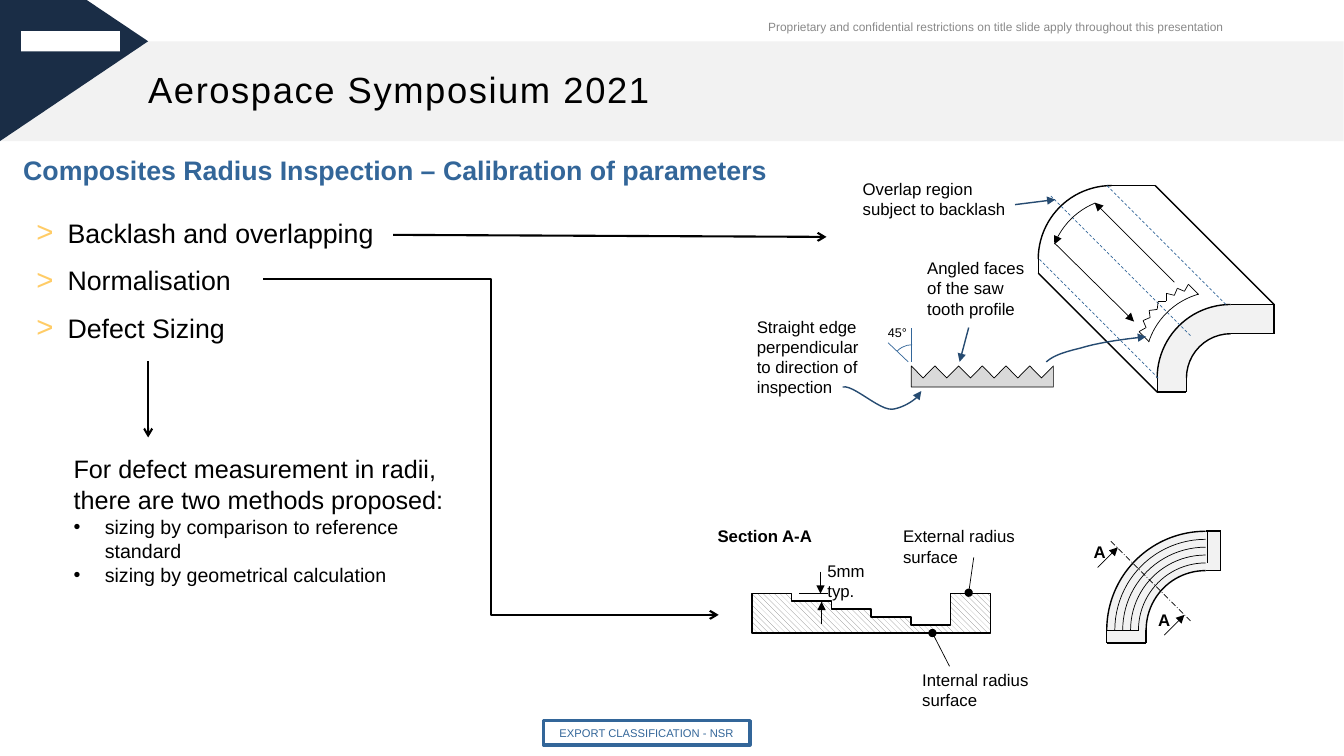
from dataclasses import dataclass
from itertools import pairwise
from math import cos, pi, sin

from lxml import etree
from pptx import Presentation
from pptx.dml.color import RGBColor
from pptx.enum.dml import MSO_LINE, MSO_PATTERN
from pptx.enum.shapes import MSO_CONNECTOR, MSO_SHAPE
from pptx.enum.text import MSO_ANCHOR, MSO_AUTO_SIZE, PP_ALIGN
from pptx.oxml.ns import qn
from pptx.util import Emu, Inches, Pt

ARC, RECT = MSO_SHAPE.ARC, MSO_SHAPE.RECTANGLE
STRAIGHT, ELBOW = MSO_CONNECTOR.STRAIGHT, MSO_CONNECTOR.ELBOW
DASH, CENTRE_LINE = MSO_LINE.DASH, MSO_LINE.LONG_DASH_DOT
HATCH = MSO_PATTERN.WIDE_DOWNWARD_DIAGONAL
LEFT, CENTER, RIGHT = PP_ALIGN.LEFT, PP_ALIGN.CENTER, PP_ALIGN.RIGHT
TOP, MIDDLE = MSO_ANCHOR.TOP, MSO_ANCHOR.MIDDLE
NO_AUTOFIT = MSO_AUTO_SIZE.NONE


@dataclass(frozen=True)
class Theme:
    font: str = "Arial"
    ink: str = "000000"
    paper: str = "FFFFFF"
    band: str = "F2F2F2"
    navy: str = "1A2D46"
    blue: str = "336699"
    pointer: str = "264B71"
    marker: str = "FFCC66"
    steel: str = "D9D9D9"
    hatch: str = "808080"
    muted: str = "898989"
    title: float = 26
    heading: float = 19.1
    lead: float = 18
    item: float = 14
    label: float = 12
    angle: float = 9
    notice: float = 8.5
    badge: float = 8
    thin: float = 0.5
    edge: float = 1
    flow: float = 1.5
    frame: float = 2.5


def grid(value):
    return Emu(round(Inches(value / 10)))


def apply(target, values):
    for name, value in values.items():
        setattr(target, name, value)


def bezier(start, *segments, steps=12):
    points = [start]
    for a, b, end in segments:
        origin = points[-1]
        for i in range(1, steps + 1):
            t, u = i / steps, 1 - i / steps
            points.append(tuple(u**3 * p + 3 * u * u * t * q + 3 * u * t * t * r + t**3 * s
                                for p, q, r, s in zip(origin, a, b, end)))
    return points


def quarter(center, radius, steps=24):
    angles = [pi + pi / 2 * i / steps for i in range(steps + 1)]
    return [(center[0] + radius * cos(a), center[1] + radius * sin(a)) for a in angles]


class Sheet:
    """Draws styled elements on one slide, on a grid of tenth-inch columns and rows."""

    def __init__(self, slide, theme):
        self.slide, self.shapes, self.theme = slide, slide.shapes, theme

    def stroke(self, shape, color, width, dash=None, head=None, tail=None):
        shape.line.color.rgb = RGBColor.from_string(color)
        apply(shape.line, {"width": Pt(width), "dash_style": dash})
        for tag, kind in (("a:headEnd", head), ("a:tailEnd", tail)):
            if kind:
                etree.SubElement(shape.get_or_add_ln(), qn(tag), type=kind)

    def paint(self, shape, fill=None, line=None, **style):
        shape.shadow.inherit = False
        if fill:
            shape.fill.solid()
            shape.fill.fore_color.rgb = RGBColor.from_string(fill)
        else:
            shape.fill.background()
        if line:
            self.stroke(shape, line, **style)
        else:
            shape.line.fill.background()
        return shape

    def line(self, start, end, color=None, width=None, kind=STRAIGHT, **style):
        connector = self.shapes.add_connector(kind, *map(grid, (*start, *end)))
        self.stroke(connector, color or self.theme.ink, width or self.theme.thin, **style)
        etree.SubElement(connector._element.spPr, qn("a:effectLst"))

    def outline(self, points, closed=True, **style):
        corners = [(grid(x), grid(y)) for x, y in points]
        builder = self.shapes.build_freeform(*corners[0])
        builder.add_line_segments(corners[1:], close=closed)
        return self.paint(builder.convert_to_shape(), **style)

    def block(self, box, **style):
        return self.paint(self.shapes.add_shape(RECT, *map(grid, box)), **style)

    def arc(self, box, span=(162, 0), turn=270, color=None, **style):
        curve = self.shapes.add_shape(ARC, *map(grid, box))
        curve.rotation = turn
        curve.adjustments[0], curve.adjustments[1] = span
        self.paint(curve, line=color or self.theme.ink, **style)

    def quarter_arc(self, center, radius, **style):
        self.arc((center[0] - radius, center[1] - radius, 2 * radius, 2 * radius), **style)

    def bend(self, center, outer, inner, right, bottom):
        x, y = center
        rim, bore = quarter(center, outer), quarter(center, inner)
        self.outline([(x - outer, bottom), *rim, (right, y - outer), (right, y - inner),
                      *reversed(bore), (x - inner, bottom)], fill=self.theme.band)
        for radius in (outer, inner):
            self.quarter_arc(center, radius, width=self.theme.edge)
            self.line((x - radius, y), (x - radius, bottom), width=self.theme.edge)
            self.line((right, y - radius), (x, y - radius), width=self.theme.edge)
        self.line((right, y - outer), (right, y - inner), width=self.theme.edge)
        self.line((x - outer, bottom), (x - inner, bottom), width=self.theme.edge)

    def typeset(self, frame, lines, insets=(1, 0.5, 1, 0.5), anchor=TOP, spacing=1.0, gap=0,
                align=LEFT, color=None, bold=False, tracking=0):
        sides = ("margin_left", "margin_top", "margin_right", "margin_bottom")
        apply(frame, {"word_wrap": True, "auto_size": NO_AUTOFIT, "vertical_anchor": anchor,
                      **dict(zip(sides, map(grid, insets)))})
        for i, (words, size, bullet) in enumerate(lines):
            paragraph = frame.add_paragraph() if i else frame.paragraphs[0]
            apply(paragraph, {"alignment": align, "line_spacing": spacing,
                              "space_before": Pt(gap), "space_after": Pt(gap)})
            run = paragraph.add_run()
            run.text = words
            apply(run.font, {"name": self.theme.font, "size": Pt(size), "bold": bold})
            run.font.color.rgb = RGBColor.from_string(color or self.theme.ink)
            if tracking:
                run._r.get_or_add_rPr().set("spc", str(tracking))
            self.bullet(paragraph, bullet)

    def bullet(self, paragraph, mark):
        layout = paragraph._p.get_or_add_pPr()
        indent = grid(3.1) if mark else 0
        layout.set("marL", str(int(indent)))
        layout.set("indent", str(-int(indent)))
        if not mark:
            etree.SubElement(layout, qn("a:buNone"))
            return
        if mark == ">":
            tint = etree.SubElement(layout, qn("a:buClr"))
            etree.SubElement(tint, qn("a:srgbClr"), val=self.theme.marker)
            etree.SubElement(layout, qn("a:buSzPct"), val="110000")
        etree.SubElement(layout, qn("a:buFont"), typeface=self.theme.font)
        etree.SubElement(layout, qn("a:buChar"), char=mark)

    def text(self, box, words, size=None, **style):
        frame = self.shapes.add_textbox(*map(grid, box)).text_frame
        self.typeset(frame, [(words, size or self.theme.label, None)], **style)

    def placeholder(self, index, box, lines, **style):
        holder = self.slide.placeholders[index]
        apply(holder, dict(zip(("left", "top", "width", "height"), map(grid, box))))
        self.typeset(holder.text_frame, lines, **style)
        return holder


def draw_frame(sheet, t):
    title = sheet.placeholder(0, (0, 4.1, 133.3, 9.9), [("Aerospace Symposium 2021", t.title, None)],
                              insets=(14.7, 0, 0, 0.4), anchor=MIDDLE, tracking=110)
    sheet.paint(title, fill=t.band)
    sheet.outline([(0, 14), (14.7, 4.1), (8.6, 0), (0, 0)], fill=t.navy)
    sheet.block((2.1, 3.1, 9.8, 2), fill=t.paper)
    sheet.text((60.6, 1.9, 60.8, 2.1), "Proprietary and confidential restrictions on title slide "
               "apply throughout this presentation", t.notice, insets=(0,) * 4, align=RIGHT,
               spacing=1.02, color=t.muted)
    badge = sheet.block((53.9, 71.5, 20.5, 2.4), fill=t.paper, line=t.blue, width=t.frame)
    sheet.typeset(badge.text_frame, [("EXPORT CLASSIFICATION - NSR", t.badge, None)],
                  anchor=MIDDLE, align=CENTER, color=t.blue)


def draw_topics(sheet, t):
    body = {"insets": (0,) * 4, "spacing": 1.02}
    sheet.text((2.3, 15.2, 86.5, 12.6), "Composites Radius Inspection – Calibration of parameters",
               t.heading, gap=5.3, color=t.blue, bold=True, **body)
    topics = ("Backlash and overlapping", "Normalisation", "Defect Sizing")
    sheet.placeholder(1, (3.6, 21.4, 43.9, 12.6), [(topic, t.heading, ">") for topic in topics],
                      gap=5.3, **body)
    sheet.placeholder(2, (7.3, 44.9, 38.6, 14), [
        ("For defect measurement in radii, there are two methods proposed:", t.lead, None),
        ("sizing by comparison to reference standard", t.item, "•"),
        ("sizing by geometrical calculation", t.item, "•")], **body)
    for start, end, kind in (((39, 23.3), (82, 23.5), STRAIGHT), ((26.1, 27.7), (71.3, 61), ELBOW),
                             ((14.7, 35.8), (14.7, 43.4), STRAIGHT)):
        sheet.line(start, end, width=t.flow, kind=kind, tail="arrow")


def draw_overlap(sheet, t):
    depth, front = 11.8, (122.1, 37.5)
    rear = (front[0] - depth, front[1] - depth)
    sheet.bend(front, 7.3, 4.4, 126.4, 38.9)
    sheet.quarter_arc(rear, 7.3, width=t.edge)
    sheet.line((114.6, 18.4), (110.2, 18.4), width=t.edge)
    sheet.line((103, 25.7), (103, 27.1), width=t.edge)
    for x, y in ((114.8, 38.9), (126.4, 30.2)):
        sheet.line((x, y), (x - depth, y - depth), width=t.edge)
    for x, y, run in ((118.1, 33.3, 13.85), (121.6, 30.2, depth), (114.9, 37.5, depth)):
        sheet.line((x, y), (x - run, y - run), t.blue, dash=DASH)
    sheet.line((116.5, 28), (108.6, 20.1), tail="triangle")
    sheet.line((112.5, 31.9), (104.6, 24.1), head="triangle")
    sheet.arc((104.1, 19.6, 14.6, 14.6), (174.83, 202.67), width=t.thin, head="triangle")
    sheet.arc((113.6, 28.9, 14.6, 14.6), (172.83, 206.59), width=t.thin)
    curved_saw = [(114, 33.9), (113, 32.9), (113.7, 32.5), (113.4, 31.8), (114.1, 31.5),
                  (114, 30.8), (114.8, 30.7), (114.9, 29.9), (115.7, 29.9), (115.7, 29.1),
                  (116.5, 29.3), (116.8, 28.6), (117.5, 28.9), (117.9, 28.2), (118.9, 29.2)]
    for start, end in pairwise(curved_saw):
        sheet.line(start, end)
    teeth = [(90.4 + 14.1 * i / 12, 37.5 if i % 2 else 36.3) for i in range(13)]
    sheet.outline([(90.4, 38.4), *teeth, (104.5, 38.4)], fill=t.steel, line=t.ink, width=t.thin)
    pointer = {"closed": False, "line": t.pointer, "width": t.edge}
    sheet.outline(bezier((103.8, 35.9), ((104.6, 35.2), (105.7, 34.9), (107.3, 34.5)),
                         ((109, 34), (111, 33.7), (113.7, 33.4))), tail="triangle", **pointer)
    sheet.outline(bezier((91.4, 38.8), ((91.2, 39.5), (89.6, 40.5), (88.5, 40.6)),
                         ((87.2, 40.7), (84.6, 38.1), (83.6, 38.4))), head="triangle", **pointer)
    sheet.line((100.7, 20.3), (104.7, 19.8), t.pointer, t.edge, tail="triangle")
    sheet.line((96.1, 32.5), (95.2, 35.9), t.pointer, t.edge, tail="triangle")
    sheet.line((90.4, 35.9), (90.4, 32.5), t.blue)
    sheet.line((90.1, 35.9), (88.1, 34), t.blue)
    sheet.arc((88.5, 34.2, 4, 3.8), (132.03, 161.73), turn=0, color=t.blue, width=t.thin)
    sheet.text((84.6, 17.2, 16.3, 5), "Overlap region subject to backlash")
    sheet.text((91, 25.1, 11.9, 7.2), "Angled faces of the saw tooth profile")
    sheet.text((74.1, 30.9, 12.6, 9), "Straight edge perpendicular to direction of inspection")
    sheet.text((87.1, 31.7, 4.4, 3.2), "45°", t.angle)


def draw_section(sheet, t):
    center, tread, drop, top, base = (119.6, 62.5), 3.94, 0.79, 58.85, 62.8
    sheet.bend(center, 9.8, 5.9, 121.1, 63.8)
    for i in range(4):
        sheet.quarter_arc(center, 9 - 0.78 * i, width=t.thin)
    sheet.line((119.8, 52.7), (119.8, 55.9))
    sheet.line((109.8, 62.5), (113, 62.5))
    sheet.line((110.2, 53.7), (118.1, 61.6), dash=CENTRE_LINE)
    for x, y in ((108.9, 56.3), (115.5, 63)):
        sheet.line((x, y), (x + 2, y - 2), tail="triangle")
    steps = [(74.6 + tread * (i + side), top + drop * i) for i in range(5) for side in (0, 1)]
    wall = 74.6 + 5 * tread
    profile = sheet.outline([*steps, (wall, top), (wall + tread, top), (wall + tread, base),
                             (74.6, base)], line=t.ink, width=t.edge)
    profile.fill.patterned()
    profile.fill.pattern = HATCH
    profile.fill.fore_color.rgb = RGBColor.from_string(t.hatch)
    profile.fill.back_color.rgb = RGBColor.from_string(t.paper)
    sheet.line((96.6, 55.3), (96.1, 58.8), tail="oval")
    sheet.line((94.2, 66.1), (92.5, 62.8), tail="oval")
    sheet.line((79.3, 58.9), (82.1, 58.9))
    sheet.line((81.4, 56.7), (81.4, 58.9), tail="triangle")
    sheet.line((81.5, 59.7), (81.5, 61.9), head="triangle")
    for box, words, bold in (((70.2, 51.7, 11.7, 2.9), "Section A-A", True),
                             ((107.5, 53.2, 3.7, 2.9), "A", True),
                             ((113.9, 60, 3.7, 2.9), "A", True),
                             ((88.6, 51.7, 14.8, 4.8), "External radius surface", False),
                             ((90.5, 65.9, 14.8, 4.2), "Internal radius surface", False),
                             ((81.1, 55.1, 6.6, 4.7), "5mm typ.", False)):
        sheet.text(box, words, bold=bold)


def main():
    deck, theme = Presentation(), Theme()
    apply(deck, {"slide_width": grid(133.33), "slide_height": grid(75)})
    sheet = Sheet(deck.slides.add_slide(deck.slide_layouts[3]), theme)
    for draw in (draw_frame, draw_topics, draw_overlap, draw_section):
        draw(sheet, theme)
    deck.save("out.pptx")


if __name__ == "__main__":
    main()
